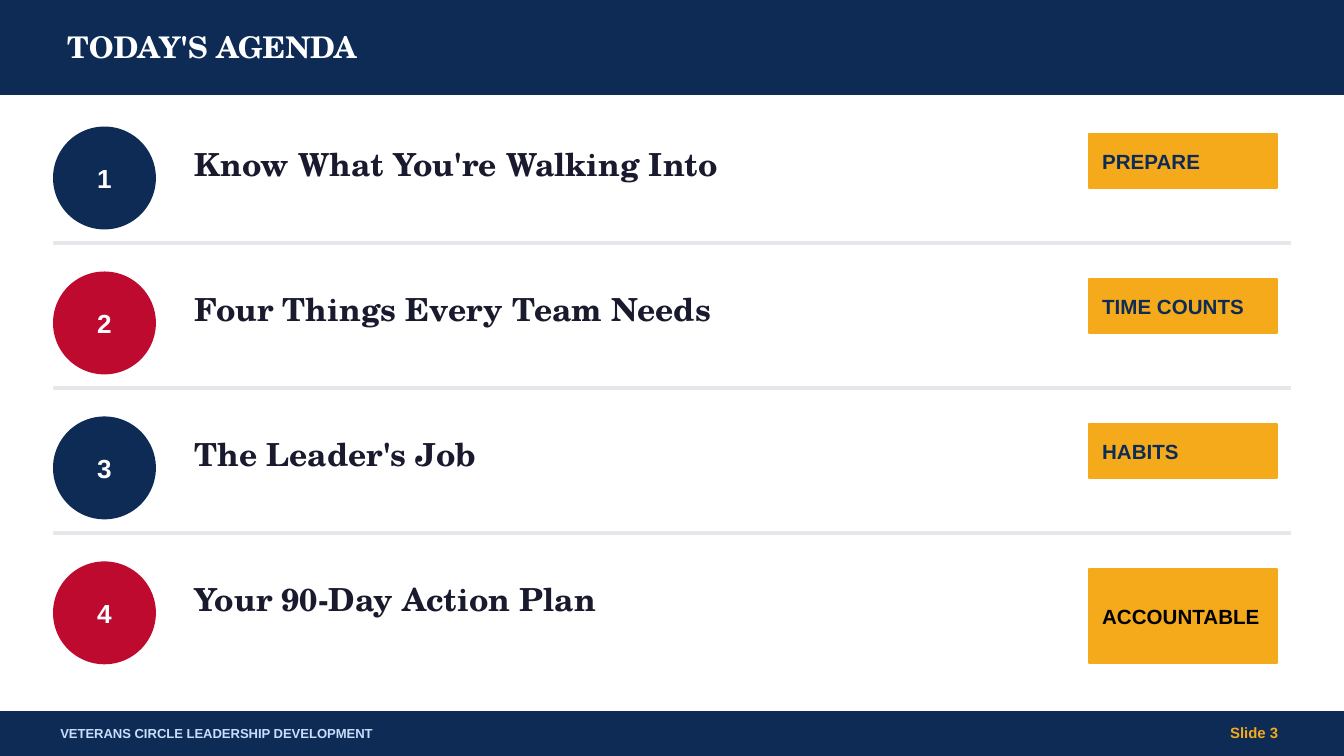
from pptx import Presentation
from pptx import util as u
from pptx.dml import color
from pptx.enum import shapes, text

SERIF, SANS = "TeX Gyre Schola", "Arial"
NAVY, RED, GOLD = "0D2B55", "BF0A30", "F5AA1C"
WHITE, INK, BLACK, RULE, PALE = "FFFFFF", "1A1A2E", "000000", "E5E7EB", "CADCFC"
LEFT, CENTER, RIGHT = text.PP_ALIGN.LEFT, text.PP_ALIGN.CENTER, text.PP_ALIGN.RIGHT
RECT, OVAL = shapes.MSO_SHAPE.RECTANGLE, shapes.MSO_SHAPE.OVAL

WIDTH, HEIGHT = 25.4, 14.29
ROW_TOP, ROW_PITCH, ROW_HEIGHT = 2.41, 2.74, 1.91

# heading, label, label height, label colour
AGENDA = [
    ("Know What You're Walking Into", "PREPARE", 1.02, NAVY),
    ("Four Things Every Team Needs", "TIME COUNTS", 1.02, NAVY),
    ("The Leader's Job", "HABITS", 1.02, NAVY),
    ("Your 90-Day Action Plan", "ACCOUNTABLE", 1.78, BLACK),
]


def rgb(value):
    return color.RGBColor.from_string(value)


def to_cm(box):
    return [u.Cm(length) for length in box]


def write(shape, words, font, size, ink, align=LEFT):
    frame = shape.text_frame
    frame.word_wrap = True
    frame.vertical_anchor = text.MSO_ANCHOR.MIDDLE
    frame.text = words
    para = frame.paragraphs[0]
    para.alignment = align
    span = para.runs[0].font
    span.name, span.size, span.bold = font, u.Pt(size), True
    span.color.rgb = rgb(ink)


def add_block(page, kind, box, fill):
    shape = page.shapes.add_shape(kind, *to_cm(box))
    shape.shadow.inherit = False
    shape.fill.solid()
    shape.fill.fore_color.rgb = rgb(fill)
    shape.line.color.rgb = rgb(fill)
    shape.line.width = u.Pt(1)
    return shape


def add_words(page, box, *style):
    write(page.shapes.add_textbox(*to_cm(box)), *style)


def add_header(page, box):
    left, top, width, height = box
    add_block(page, RECT, box, NAVY)
    add_words(page, (left + 1.02, top, width - 2.54, height),
              "TODAY'S AGENDA", SERIF, 16, WHITE)


def add_agenda_row(page, box, number, item):
    left, top, width, height = box
    heading, label, label_height, label_ink = item
    circle = add_block(page, OVAL, (left, top, height, height), RED if number % 2 == 0 else NAVY)
    write(circle, str(number), SANS, 14, WHITE, CENTER)
    add_words(page, (left + 2.41, top + 0.05, 16.51, 1.27), heading, SERIF, 17, INK)
    tag = add_block(page, RECT, (left + width - 3.81, top + 0.13, 3.56, label_height), GOLD)
    write(tag, label, SANS, 11, label_ink)


def add_agenda(page, box):
    """Stack the agenda rows, with a rule between each two."""
    left, top, width, height = box
    for index, item in enumerate(AGENDA):
        row_top = top + index * ROW_PITCH
        add_agenda_row(page, (left, row_top, width, height), index + 1, item)
        if index < len(AGENDA) - 1:
            add_block(page, RECT, (left, row_top + 2.16, width, 0.05), RULE)


def add_footer(page, box):
    left, top, width, height = box
    add_block(page, RECT, box, NAVY)
    add_words(page, (left + 0.89, top, 15.24, height),
              "VETERANS CIRCLE LEADERSHIP DEVELOPMENT", SANS, 7, PALE)
    add_words(page, (left + width - 6.45, top - 0.02, 5.46, height),
              "Slide 3", SANS, 8, GOLD, RIGHT)


def main():
    deck = Presentation()
    deck.slide_width, deck.slide_height = u.Cm(WIDTH), u.Cm(HEIGHT)
    page = deck.slides.add_slide(deck.slide_layouts[6])
    add_header(page, (0, 0, WIDTH, 1.78))
    add_agenda(page, (1.02, ROW_TOP, 23.37, ROW_HEIGHT))
    add_footer(page, (0, 13.45, WIDTH, 0.84))
    deck.save("out.pptx")


if __name__ == "__main__":
    main()
